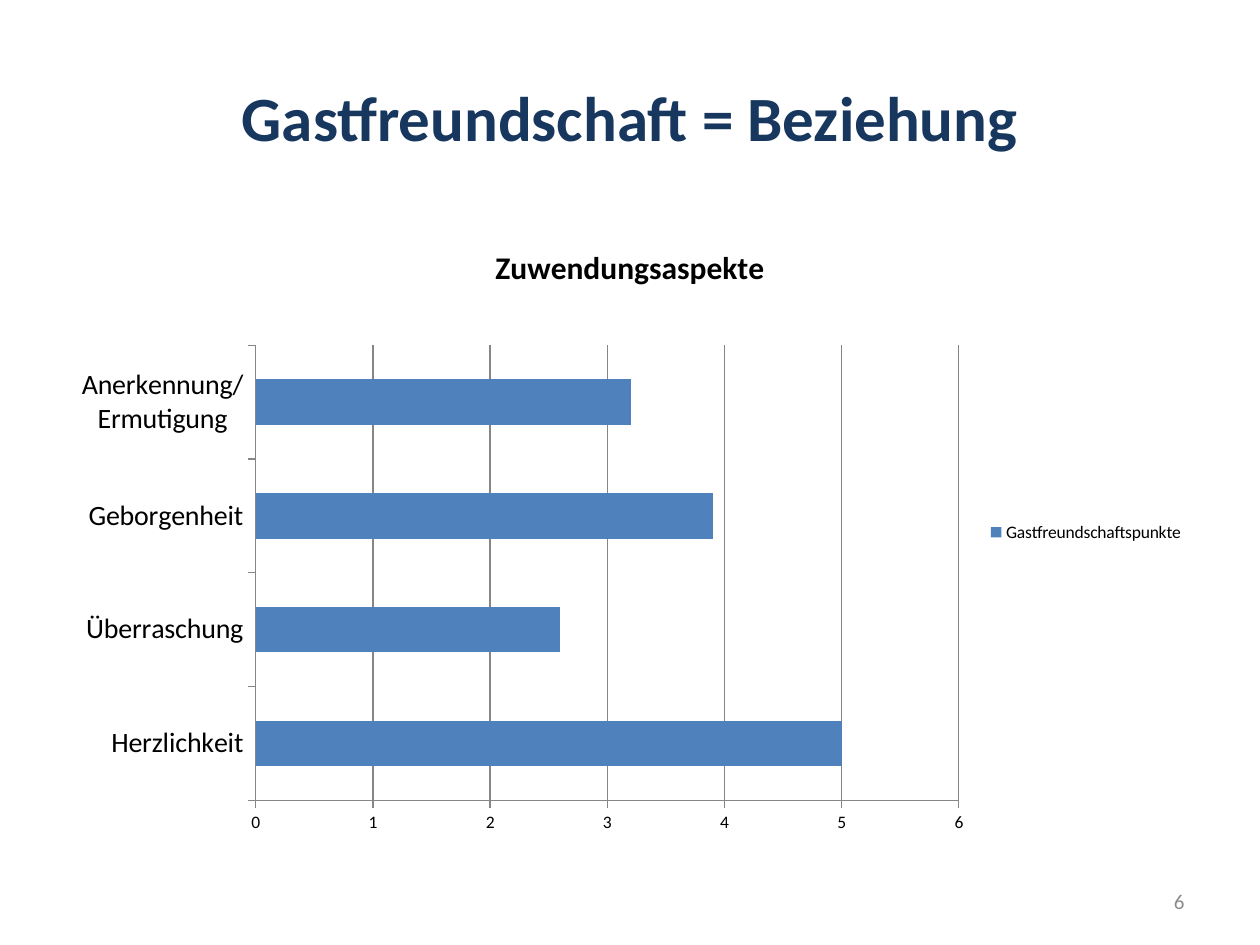
from lxml import etree
from pptx import Presentation
from pptx.chart.data import CategoryChartData
from pptx.dml.color import RGBColor
from pptx.enum.chart import XL_CHART_TYPE, XL_LEGEND_POSITION, XL_TICK_MARK
from pptx.enum.text import MSO_ANCHOR, PP_ALIGN
from pptx.oxml.ns import qn
from pptx.util import Inches, Pt

BAR = XL_CHART_TYPE.BAR_CLUSTERED
RIGHT_LEGEND = XL_LEGEND_POSITION.RIGHT
TICK_OUTSIDE = XL_TICK_MARK.OUTSIDE
MIDDLE = MSO_ANCHOR.MIDDLE
CENTER, RIGHT = PP_ALIGN.CENTER, PP_ALIGN.RIGHT

WIDTH, HEIGHT = 10, 7.5
MARGIN = WIDTH / 20
CONTENT_WIDTH = WIDTH - 2 * MARGIN
FONT = "Calibri"
COLORS = {
    "heading": "17375E",
    "page": "8C8C8C",
    "text": "000000",
    "bar": "4F81BD",
    "grid": "868686",
}
SERIES = "Gastfreundschaftspunkte"
POINTS = {
    "Herzlichkeit": 5,
    "Überraschung": 2.6,
    "Geborgenheit": 3.9,
    "Anerkennung/Ermutigung": 3.2,
}
# Shares of the chart's frame
PLOT_AREA = {"x": 0.17, "y": 0.2, "w": 0.62, "h": 0.73}


def color(key):
    return RGBColor.from_string(COLORS[key])


def style_font(font, size, key, bold=False):
    font.name, font.size, font.bold = FONT, Pt(size), bold
    font.color.rgb = color(key)


def add_text(slide, text, box, size, key, align, bold=False):
    frame = slide.shapes.add_textbox(*map(Inches, box)).text_frame
    frame.word_wrap = True
    frame.vertical_anchor = MIDDLE
    paragraph = frame.paragraphs[0]
    paragraph.text = text
    paragraph.alignment = align
    style_font(paragraph.font, size, key, bold)


def place_plot_area(chart, shares):
    """Fix the inner plot area, without axis labels, inside the chart."""
    plot_area = chart.plots[0]._element.getparent()
    for old in plot_area.findall(qn("c:layout")):
        plot_area.remove(old)
    layout = etree.Element(qn("c:layout"))
    manual = etree.SubElement(layout, qn("c:manualLayout"))
    settings = {"layoutTarget": "inner", "xMode": "edge", "yMode": "edge", **shares}
    for tag, value in settings.items():
        etree.SubElement(manual, qn(f"c:{tag}")).set("val", str(value))
    plot_area.insert(0, layout)


def style_axis(axis, size):
    axis.major_tick_mark = TICK_OUTSIDE
    style_font(axis.tick_labels.font, size, "text")
    axis.format.line.color.rgb = color("grid")
    axis.format.line.width = Pt(0.75)


def add_points_chart(slide, box):
    data = CategoryChartData()
    data.categories = list(POINTS)
    data.add_series(SERIES, list(POINTS.values()))
    chart = slide.shapes.add_chart(BAR, *map(Inches, box), data).chart
    style_font(chart.font, 10, "text")

    heading = chart.chart_title.text_frame
    heading.text = "Zuwendungsaspekte"
    style_font(heading.paragraphs[0].font, 18, "text", True)

    chart.has_legend = True
    chart.legend.position = RIGHT_LEGEND
    chart.legend.include_in_layout = False

    plot = chart.plots[0]
    plot.gap_width = 150
    plot.vary_by_categories = False
    bars = plot.series[0].format.fill
    bars.solid()
    bars.fore_color.rgb = color("bar")

    style_axis(chart.category_axis, 16)
    points_axis = chart.value_axis
    style_axis(points_axis, 10)
    points_axis.minimum_scale, points_axis.maximum_scale = 0, 6
    points_axis.major_unit = 1
    points_axis.major_gridlines.format.line.color.rgb = color("grid")
    points_axis.major_gridlines.format.line.width = Pt(0.75)
    place_plot_area(chart, PLOT_AREA)


def main():
    deck = Presentation()
    deck.slide_width, deck.slide_height = Inches(WIDTH), Inches(HEIGHT)
    slide = deck.slides.add_slide(deck.slide_layouts[6])

    add_text(slide, "Gastfreundschaft = Beziehung",
             (MARGIN, HEIGHT * 0.04, CONTENT_WIDTH, HEIGHT / 6),
             36, "heading", CENTER, bold=True)
    add_points_chart(slide, (MARGIN, 1.75, CONTENT_WIDTH, HEIGHT * 0.66))
    number_width = 2.33
    add_text(slide, "6",
             (WIDTH - MARGIN - number_width, 6.95, number_width, 0.4),
             12, "page", RIGHT)
    deck.save("out.pptx")


if __name__ == "__main__":
    main()
